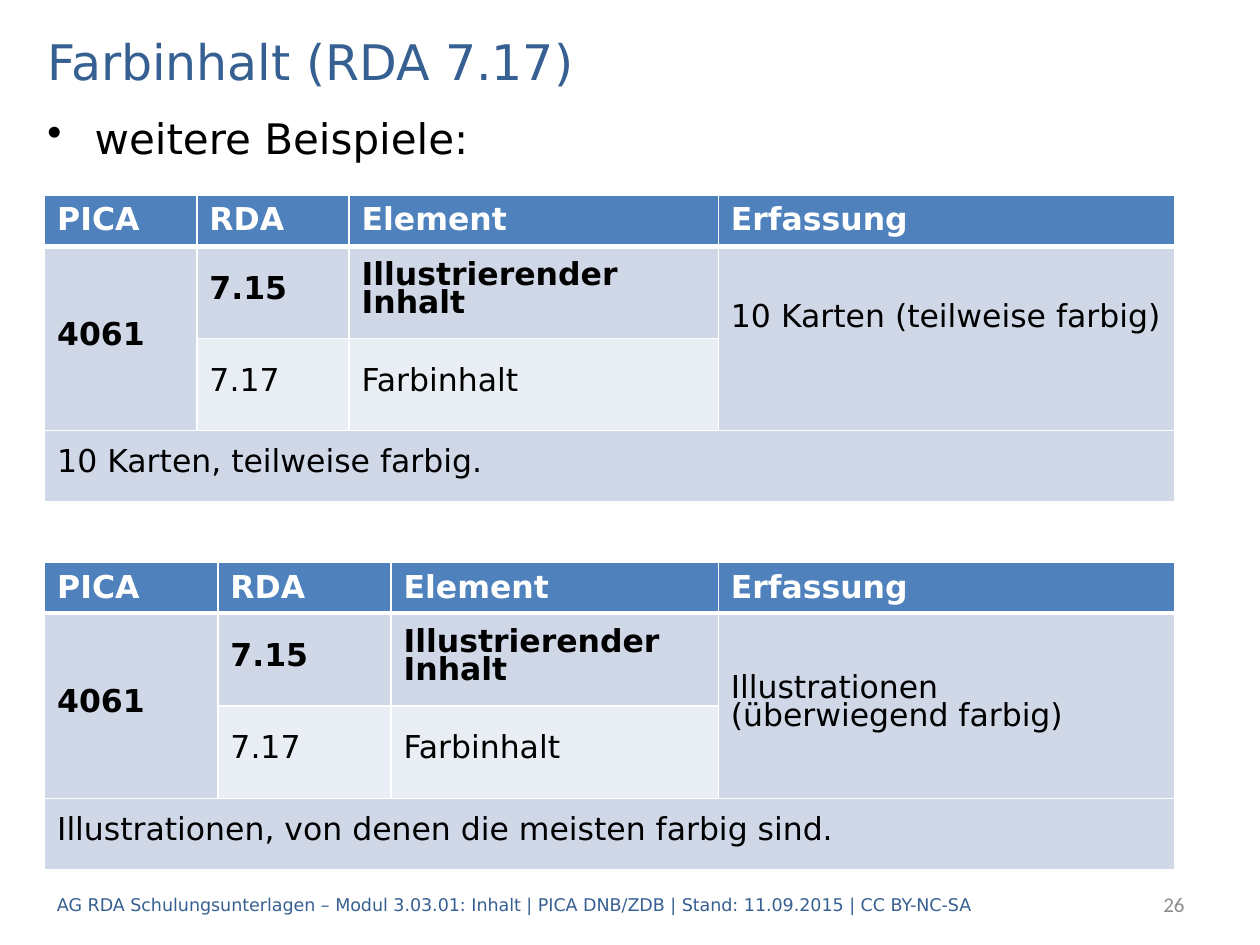
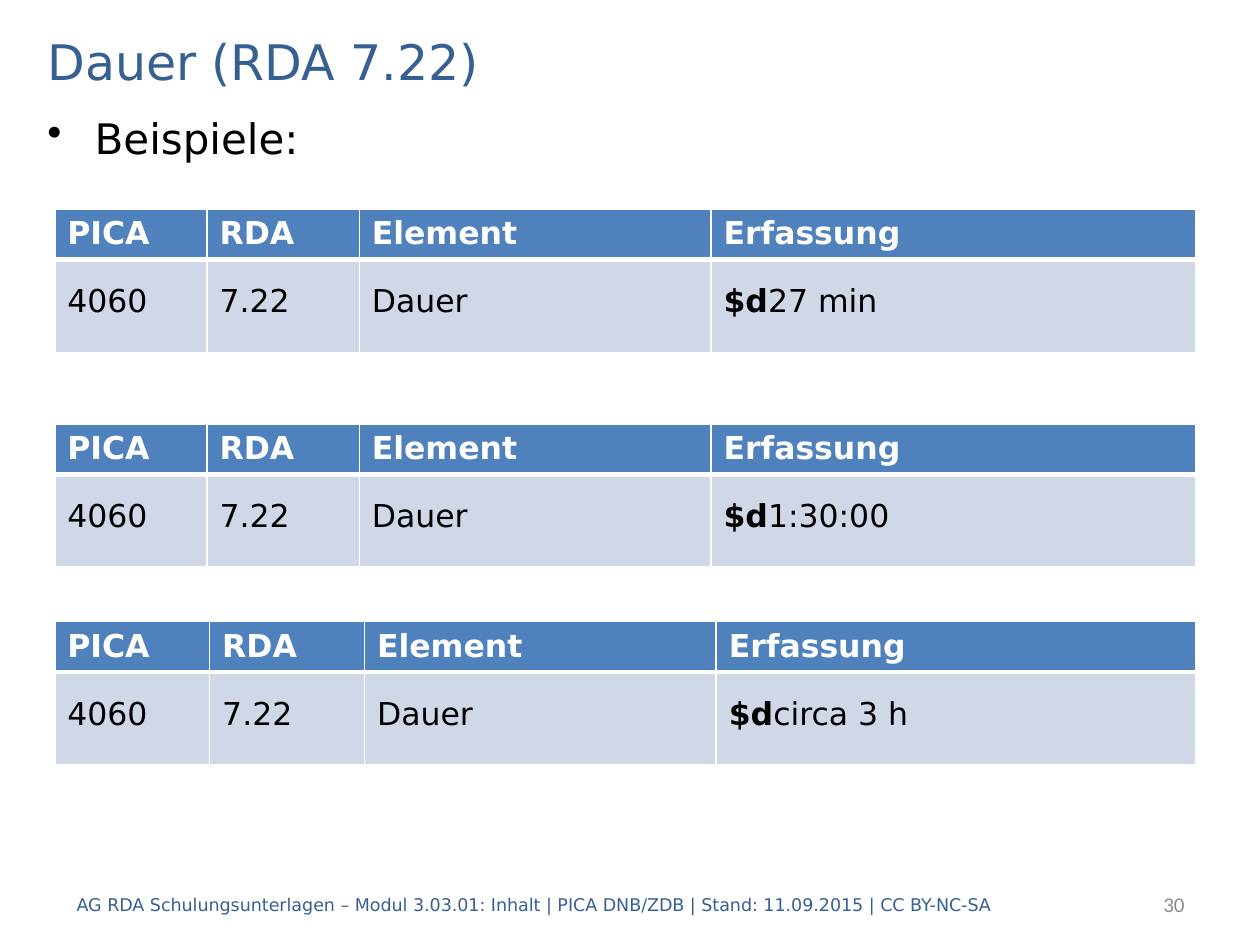
from dataclasses import dataclass
from lxml.etree import SubElement as Sub
from pptx import Presentation
from pptx.dml.color import RGBColor as RGB
from pptx.enum.text import MSO_ANCHOR as Anchor, PP_ALIGN as Align
from pptx.oxml.ns import qn
from pptx.util import Pt


# Theme: colours and type sizes
@dataclass(frozen=True)
class Theme:
    face: str = "DejaVu Sans"
    alt: str = "Calibri"
    navy: str = "376092"
    blue: str = "4F81BD"
    band: str = "D0D8E8"
    pale: str = "E9EDF4"
    gray: str = "8C8C8C"
    black: str = "000000"
    white: str = "FFFFFF"
    title: int = 28
    point: int = 24
    cell: int = 18
    page: int = 12
    foot: int = 10


T = Theme()
HEAD = ["PICA", "RDA", "Element", "Erfassung"]
FOOT = ("AG RDA Schulungsunterlagen – Modul 3.03.01: Inhalt | "
        "PICA DNB/ZDB | Stand: 11.09.2015 | CC BY-NC-SA")


# Text
def apply(item, form):
    for key, value in form.items():
        setattr(item, key, value)


def add_run(para, text, size, color, bold=False, face=T.face):
    run = para.add_run()
    run.text = text
    apply(run.font, {"size": Pt(size), "bold": bold, "name": face})
    run.font.color.rgb = RGB.from_string(color)


def add_text(slide, box, text, size, color, face=T.face,
             anchor=Anchor.MIDDLE, align=Align.LEFT):
    frame = slide.shapes.add_textbox(*map(Pt, box)).text_frame
    apply(frame, {"word_wrap": True, "vertical_anchor": anchor})
    para = frame.paragraphs[0]
    para.alignment = align
    add_run(para, text, size, color, face=face)
    return para


def add_point(slide, text):
    para = add_text(slide, (20, 60.5, 439, 36), text, T.point, T.black,
                    anchor=Anchor.TOP)
    props = para._p.get_or_add_pPr()
    props.set("marL", str(Pt(27)))
    props.set("indent", str(Pt(-27)))
    Sub(props, qn("a:buChar"), char="•")


# Tables
def add_edges(cell, top, bottom):
    props = cell._tc.get_or_add_tcPr()
    widths = {"L": 1, "R": 1, "T": top, "B": bottom}
    for i, (side, width) in enumerate(widths.items()):
        line = Sub(props, qn(f"a:ln{side}"), w=str(Pt(width)))
        Sub(Sub(line, qn("a:solidFill")), qn("a:srgbClr"), val=T.white)
        props.insert(i, line)


def fill_head(cell, text):
    add_run(cell.text_frame.paragraphs[0], text, T.cell, T.white, True)


def fill_body(cell, parts):
    """Write a (bold, plain) pair into a cell."""
    cell.vertical_anchor = Anchor.MIDDLE
    para = cell.text_frame.paragraphs[0]
    apply(para, {"line_spacing": Pt(16), "space_before": Pt(6),
                 "space_after": Pt(6)})
    for text, bold in zip(parts, (True, False)):
        if text:
            add_run(para, text, T.cell, T.black, bold)


def add_grid(slide, left, top, cols, rows, body, spans=()):
    grid = slide.shapes.add_table(
        len(rows), len(cols), Pt(left), Pt(top),
        Pt(sum(cols)), Pt(sum(rows))).table
    for col, width in zip(grid.columns, cols):
        col.width = Pt(width)
    for row, height in zip(grid.rows, rows):
        row.height = Pt(height)
    for r in range(len(rows)):
        for c in range(len(cols)):
            cell = grid.cell(r, c)
            tone = (T.blue, T.band, T.pale, T.band)[r]
            cell.fill.solid()
            cell.fill.fore_color.rgb = RGB.from_string(tone)
            add_edges(cell, 3 if r == 1 else 1, 3 if r == 0 else 1)
    for c, text in enumerate(HEAD):
        fill_head(grid.cell(0, c), text)
    for (r, c), parts in body.items():
        fill_body(grid.cell(r, c), parts)
    for first, last in spans:
        grid.cell(*first).merge(grid.cell(*last))
    return grid


def add_color(slide, top, cols, rows, entry, note):
    """Table for one colour content example, with its note below."""
    body = {(1, 0): ("4061", ""), (1, 1): ("7.15", ""),
            (1, 2): ("Illustrierender Inhalt", ""), (1, 3): ("", entry),
            (2, 1): ("", "7.17"), (2, 2): ("", "Farbinhalt"),
            (3, 0): ("", note)}
    spans = [((1, 0), (2, 0)), ((1, 3), (2, 3)), ((3, 0), (3, 3))]
    return add_grid(slide, 25.5, top, cols, rows, body, spans)


def add_time(slide, top, cols, entry):
    """Table for one duration example."""
    row = [("", "4060"), ("", "7.22"), ("", "Dauer"), ("$d", entry)]
    body = {(1, c): parts for c, parts in enumerate(row)}
    add_grid(slide, 31.3, top, cols, [28, 53], body)


# Slide frame
def add_slide(deck, title, point, page, left):
    slide = deck.slides.add_slide(deck.slide_layouts[6])
    add_text(slide, (20, 14.5, 680, 40), title, T.title, T.navy)
    add_point(slide, point)
    add_text(slide, (left, 502.2, 657, 29), FOOT, T.foot, T.navy)
    add_text(slide, (569.5, 502, 114.5, 29), page, T.page, T.gray,
             face=T.alt, align=Align.RIGHT)
    return slide


def main():
    deck = Presentation()
    apply(deck, {"slide_width": Pt(720), "slide_height": Pt(540)})

    # Colour content
    slide = add_slide(deck, "Farbinhalt (RDA 7.17)", "weitere Beispiele:",
                      "26", 25.5)
    grid = add_color(slide, 111.5, [87, 87, 211, 261], [29.5, 52.5, 52.5, 41],
                     "10 Karten (teilweise farbig)",
                     "10 Karten, teilweise farbig.")
    grid.cell(1, 3).margin_bottom = Pt(24)
    add_color(slide, 321.5, [99, 99, 187, 261], [28, 53, 53, 41],
              "Illustrationen (überwiegend farbig)",
              "Illustrationen, von denen die meisten farbig sind.")

    # Duration
    slide = add_slide(deck, "Dauer (RDA 7.22)", "Beispiele:", "30", 36.7)
    wide = [87, 87, 201, 277]
    add_time(slide, 119.5, wide, "27 min")
    add_time(slide, 242.2, wide, "1:30:00")
    add_time(slide, 355.2, [88.5, 88.5, 201, 274], "circa 3 h")

    deck.save("out.pptx")


if __name__ == "__main__":
    main()
